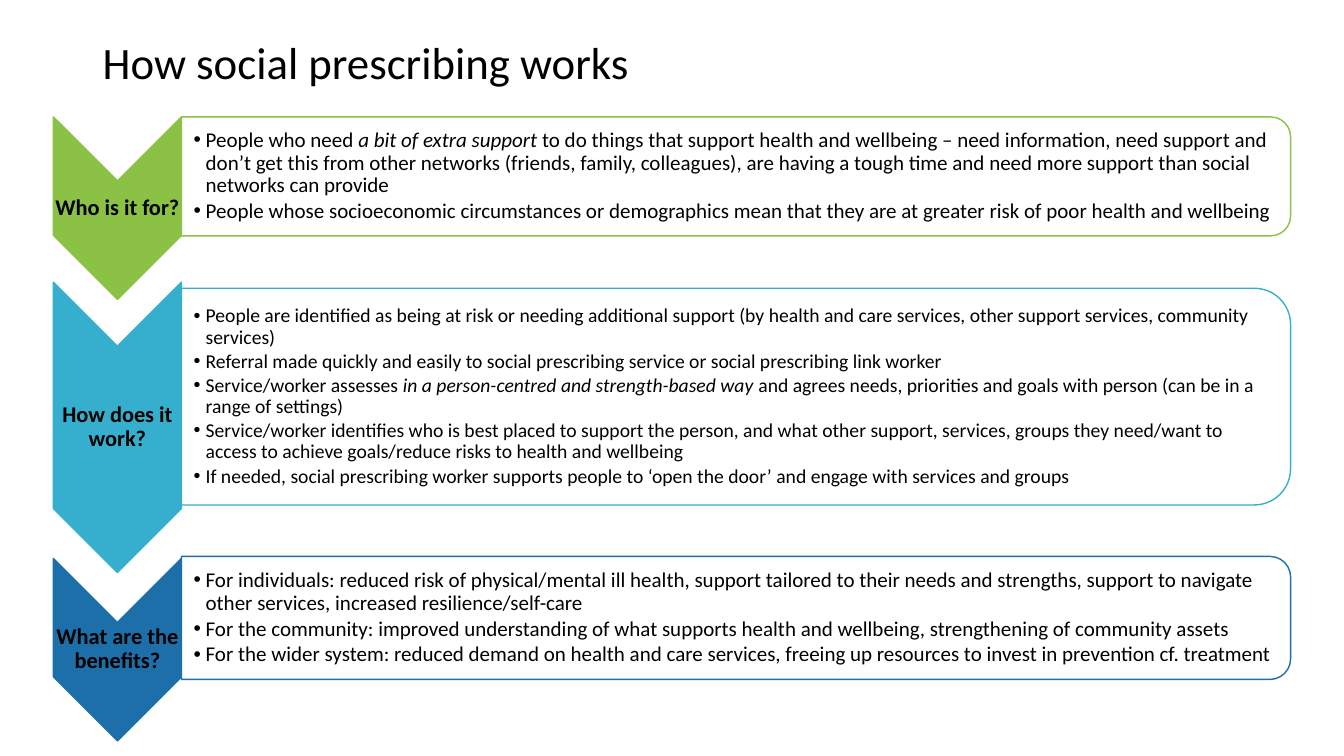
"""Build the slide that explains how social prescribing works."""
from lxml import etree
from pptx import Presentation
from pptx import util as u
from pptx.dml.color import RGBColor
from pptx.enum import shapes, text
from pptx.oxml.ns import qn

THEME = {
    "font": "Calibri", "ink": "000000", "panel": "FFFFFF", "panel_alpha": 90,
    "title": 32, "label": 16, "line": 1, "spacing": 0.9, "after": 0.15,
}
TITLE = "How social prescribing works"
STAGES = [
    {"label": "Who is it for?", "color": "8BC145", "size": 15,
     "arrow": (1.16, 1.81), "panel": (1.16, 1.18),
     "points": [
         ["People who need ", "a bit of extra support ",
          "to do things that support health and wellbeing – need information, need support and "
          "don’t get this from other networks (friends, family, colleagues), are having a tough "
          "time and need more support than social networks can provide"],
         ["People whose socioeconomic circumstances or demographics mean that they are at "
          "greater risk of poor health and wellbeing"]]},
    {"label": "How does it work?", "color": "36AFCE", "size": 14,
     "arrow": (2.8, 2.88), "panel": (2.86, 2.15),
     "points": [
         ["People are identified as being at risk or needing additional support (by health and "
          "care services, other support services, community services)"],
         ["Referral made quickly and easily to social prescribing service or social prescribing "
          "link worker"],
         ["Service/worker assesses ", "in a person-centred and strength-based way ",
          "and agrees needs, priorities and goals with person (can be in a range of settings)"],
         ["Service/worker identifies who is best placed to support the person, and what other "
          "support, services, groups they need/want to access to achieve goals/reduce risks to "
          "health and wellbeing"],
         ["If needed, social prescribing worker supports people to ‘open the door’ and engage "
          "with services and groups"]]},
    {"label": "What are the benefits?", "color": "1D6FA9", "size": 15,
     "arrow": (5.54, 1.81), "panel": (5.52, 1.22),
     "points": [
         ["For individuals: reduced risk of physical/mental ill health, support tailored to their "
          "needs and strengths, support to navigate other services, increased "
          "resilience/self-care"],
         ["For the community: improved understanding of what supports health and wellbeing, "
          "strengthening of community assets"],
         ["For the wider system: reduced demand on health and care services, freeing up "
          "resources to invest in prevention cf. treatment"]]},
]
ARROW_LEFT, ARROW_WIDTH = 0.53, 1.27
PANEL_LEFT, PANEL_WIDTH = ARROW_LEFT + ARROW_WIDTH, 11
CORNER_INSET = 0.049
BULLET_INDENT = 0.12


def add_turned(slide, preset, left, top, width, height, fill, line):
    """Add a preset turned by 90 degrees that fills the given upright box."""
    turned = slide.shapes.add_shape(
        preset, u.Inches(left + (width - height) / 2), u.Inches(top + (height - width) / 2),
        u.Inches(height), u.Inches(width))
    turned.rotation = 90
    turned.shadow.inherit = False
    turned.fill.solid()
    turned.fill.fore_color.rgb = RGBColor.from_string(fill)
    turned.line.color.rgb = RGBColor.from_string(line)
    turned.line.width = u.Pt(THEME["line"])
    return turned


def add_text(slide, left, top, width, height, margins):
    """Add a wrapping, vertically centred text box and return its frame."""
    frame = slide.shapes.add_textbox(*map(u.Inches, (left, top, width, height))).text_frame
    frame.word_wrap = True
    frame.vertical_anchor = text.MSO_ANCHOR.MIDDLE
    frame.margin_left, frame.margin_top, frame.margin_right, frame.margin_bottom = map(
        u.Inches, margins)
    return frame


def style(paragraph, size, bold=False):
    """Give a paragraph its line spacing and its runs their font."""
    paragraph.line_spacing = THEME["spacing"]
    for run in paragraph.runs:
        run.font.name = THEME["font"]
        run.font.size = u.Pt(size)
        run.font.bold = bold
        run.font.color.rgb = RGBColor.from_string(THEME["ink"])


def add_bullet(paragraph, parts, size):
    """Write a bulleted point; every second part is italic."""
    for index, part in enumerate(parts):
        run = paragraph.add_run()
        run.text = part
        run.font.italic = index % 2 == 1
    style(paragraph, size)
    paragraph.space_after = u.Pt(size * THEME["after"])
    properties = paragraph._p.get_or_add_pPr()
    properties.set("marL", str(u.Inches(BULLET_INDENT)))
    properties.set("indent", str(-u.Inches(BULLET_INDENT)))
    etree.SubElement(properties, qn("a:buFont")).set("typeface", "Arial")
    etree.SubElement(properties, qn("a:buChar")).set("char", "•")


def add_stage(slide, stage):
    """Draw one arrow with its label and the panel beside it."""
    top, height = stage["arrow"]
    add_turned(slide, shapes.MSO_SHAPE.CHEVRON, ARROW_LEFT, top, ARROW_WIDTH, height,
               stage["color"], stage["color"])
    label = add_text(slide, ARROW_LEFT, top + ARROW_WIDTH / 2, ARROW_WIDTH,
                     height - ARROW_WIDTH, [0.01] * 4)
    label.text = stage["label"]
    label.paragraphs[0].alignment = text.PP_ALIGN.CENTER
    style(label.paragraphs[0], THEME["label"], bold=True)

    top, height = stage["panel"]
    panel = add_turned(slide, shapes.MSO_SHAPE.ROUND_2_SAME_RECTANGLE, PANEL_LEFT, top,
                       PANEL_WIDTH, height, THEME["panel"], stage["color"])
    panel_color = panel.fill._xPr.find(qn("a:solidFill"))[0]
    etree.SubElement(panel_color, qn("a:alpha")).set("val", str(THEME["panel_alpha"] * 1000))
    inset = height * CORNER_INSET
    points = add_text(slide, PANEL_LEFT, top + inset, PANEL_WIDTH - inset, height - 2 * inset,
                      (0.12, 0.01, 0.01, 0.01))
    for index, parts in enumerate(stage["points"]):
        paragraph = points.add_paragraph() if index else points.paragraphs[0]
        add_bullet(paragraph, parts, stage["size"])


def main():
    """Build and save the slide."""
    deck = Presentation()
    deck.slide_width, deck.slide_height = u.Inches(13.33), u.Inches(7.5)
    slide = deck.slides.add_slide(deck.slide_layouts[6])
    title = add_text(slide, 0.92, 0.14, 11.5, 1.01, (0.1, 0.05, 0.1, 0.05))
    title.text = TITLE
    style(title.paragraphs[0], THEME["title"])
    for stage in STAGES:
        add_stage(slide, stage)
    deck.save("out.pptx")


if __name__ == "__main__":
    main()
